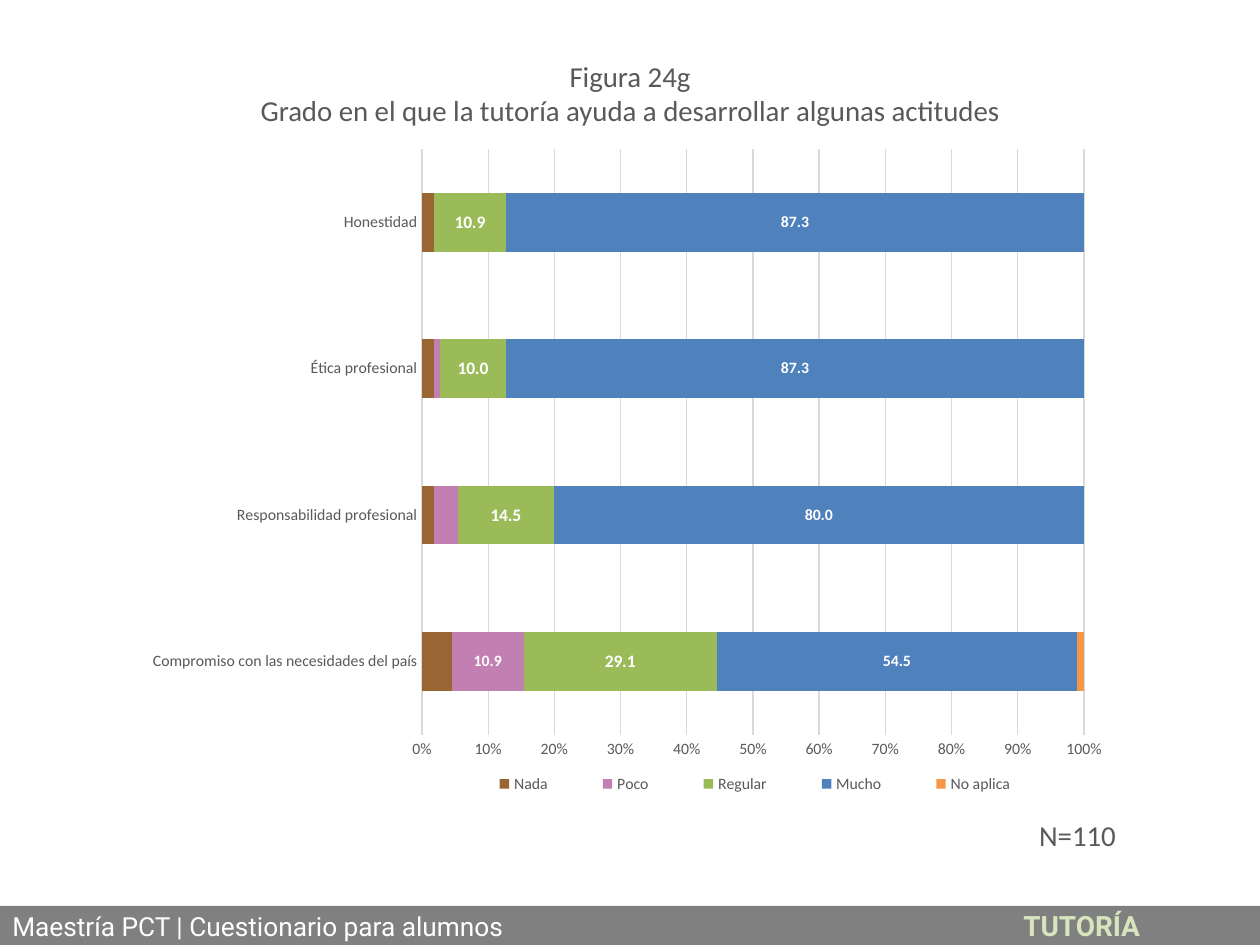
from lxml import etree
from pptx import Presentation
from pptx import util as u
from pptx.chart.data import CategoryChartData
from pptx.dml.color import RGBColor
from pptx.enum import chart as ch, shapes, text
from pptx.oxml import parse_xml
from pptx.oxml.ns import nsdecls, qn

PX = 914400 / 126
WHITE = RGBColor(0xFF, 0xFF, 0xFF)
TEXT_GRAY = RGBColor(0x59, 0x59, 0x59)
GRID_GRAY = RGBColor(0xD9, 0xD9, 0xD9)
BAND_GRAY = RGBColor(0x80, 0x80, 0x80)
PALE_GREEN = RGBColor(0xD7, 0xE4, 0xBD)
BROWN = RGBColor(0x99, 0x66, 0x33)
PINK = RGBColor(0xC2, 0x7F, 0xB2)
GREEN = RGBColor(0x9B, 0xBB, 0x59)
BLUE = RGBColor(0x4F, 0x81, 0xBD)
ORANGE = RGBColor(0xF7, 0x96, 0x46)

CATEGORIES = ["Compromiso con las necesidades del país", "Responsabilidad profesional",
              "Ética profesional", "Honestidad"]
# name, values, colour, label size, labelled points
SERIES = [
    ("Nada", (4.5, 1.8, 1.8, 1.8), BROWN, None, ()),
    ("Poco", (10.9, 3.6, 0.9, 0), PINK, 9, (0,)),
    ("Regular", (29.1, 14.5, 10.0, 10.9), GREEN, 10, range(4)),
    ("Mucho", (54.5, 80.0, 87.3, 87.3), BLUE, 9, range(4)),
    ("No aplica", (1, 0, 0, 0), ORANGE, None, ()),
]
CHART_BOX = (134, 135, 988, 674)
PLOT_BOX = (422, 149, 662, 586)
LEGEND_BOX = (450, 770, 610, 28)


def px(*values):
    return [round(v * PX) for v in values]


def set_font(font, color, **values):
    for name, value in values.items():
        setattr(font, name, value)
    font.color.rgb = color


def add_text(slide, box, lines):
    tf = slide.shapes.add_textbox(*px(*box)).text_frame
    tf.word_wrap = False
    tf.auto_size = text.MSO_AUTO_SIZE.SHAPE_TO_FIT_TEXT
    for i, line in enumerate(lines):
        p = tf.add_paragraph() if i else tf.paragraphs[0]
        p.alignment = text.PP_ALIGN.CENTER
        r = p.add_run()
        r.text = line
        set_font(r.font, TEXT_GRAY, name="Calibri", size=u.Pt(16.5))


def add_footer(slide, box, left_text, right_text, tab):
    sp = slide.shapes.add_shape(shapes.MSO_SHAPE.RECTANGLE, *px(*box))
    sp.shadow.inherit = False
    sp.fill.solid()
    sp.fill.fore_color.rgb = BAND_GRAY
    sp.line.fill.background()
    tf = sp.text_frame
    tf.vertical_anchor = text.MSO_ANCHOR.MIDDLE
    p = tf.paragraphs[0]
    p.alignment = text.PP_ALIGN.LEFT
    tabs = etree.SubElement(p._p.get_or_add_pPr(), qn("a:tabLst"))
    etree.SubElement(tabs, qn("a:tab"), pos=str(px(tab)[0]), algn="l")
    for content, color, size, bold in ((left_text + "\t", WHITE, 15, False),
                                       (right_text, PALE_GREEN, 16, True)):
        r = p.add_run()
        r.text = content
        set_font(r.font, color, name="Roboto", size=u.Pt(size), bold=bold)


def place(element, box, inner=False):
    """Give a chart part a fixed place, as fractions of the chart."""
    left, top, width, height = CHART_BOX
    fractions = ((box[0] - left) / width, (box[1] - top) / height,
                 box[2] / width, box[3] / height)
    parts = '<c:layoutTarget val="inner"/>' if inner else ""
    parts += '<c:xMode val="edge"/><c:yMode val="edge"/>'
    parts += "".join(f'<c:{k} val="{v:.4f}"/>' for k, v in zip("xywh", fractions))
    for old in element.findall(qn("c:layout")):
        element.remove(old)
    layout = parse_xml(f'<c:layout {nsdecls("c")}><c:manualLayout>{parts}'
                       '</c:manualLayout></c:layout>')
    position = element.find(qn("c:legendPos"))
    if position is None:
        element.insert(0, layout)
    else:
        position.addnext(layout)


def label_series(series, size, points):
    labels = series.data_labels
    labels.show_value = True
    labels.number_format = "###0.0"
    labels.number_format_is_linked = False
    labels.position = ch.XL_LABEL_POSITION.CENTER
    set_font(labels.font, WHITE, name="Calibri", size=u.Pt(size), bold=True)
    for i in set(range(len(CATEGORIES))) - set(points):
        hidden = parse_xml(f'<c:dLbl {nsdecls("c")}><c:idx val="{i}"/>'
                           '<c:delete val="1"/></c:dLbl>')
        labels._element.insert_element_before(
            hidden, "c:numFmt", "c:spPr", "c:txPr", "c:dLblPos", "c:showLegendKey")


def add_bar_chart(slide):
    data = CategoryChartData(number_format="###0.0")
    data.categories = CATEGORIES
    for name, values, *_ in SERIES:
        data.add_series(name, values)
    chart = slide.shapes.add_chart(
        ch.XL_CHART_TYPE.BAR_STACKED_100, *px(*CHART_BOX), data).chart
    chart.has_title = False
    set_font(chart.font, TEXT_GRAY, name="Calibri", size=u.Pt(9))

    # Bars
    plot = chart.plots[0]
    plot.gap_width, plot.overlap, plot.vary_by_categories = 150, 100, False
    for series, (_, _, color, size, points) in zip(plot.series, SERIES):
        series.format.fill.solid()
        series.format.fill.fore_color.rgb = color
        if points:
            label_series(series, size, points)

    # Axes
    cat, val = chart.category_axis, chart.value_axis
    for axis in (cat, val):
        axis.major_tick_mark = axis.minor_tick_mark = ch.XL_TICK_MARK.NONE
        set_font(axis.tick_labels.font, TEXT_GRAY, name="Calibri", size=u.Pt(9))
    val.has_major_gridlines = True
    for line in (cat.format.line, val.major_gridlines.format.line):
        line.color.rgb = GRID_GRAY
        line.width = u.Pt(0.75)
    val.format.line.fill.background()
    val.minimum_scale, val.maximum_scale, val.major_unit = 0, 1, 0.1
    val.tick_labels.number_format = "0%"
    val.tick_labels.number_format_is_linked = False

    # Legend and fixed places
    chart.has_legend = True
    legend = chart.legend
    legend.position = ch.XL_LEGEND_POSITION.BOTTOM
    legend.include_in_layout = False
    set_font(legend.font, TEXT_GRAY, name="Calibri", size=u.Pt(9))
    place(legend._element, LEGEND_BOX)
    place(chart._chartSpace.chart.plotArea, PLOT_BOX, inner=True)


def main():
    prs = Presentation()
    prs.slide_width, prs.slide_height = px(1260, 945)
    slide = prs.slides.add_slide(prs.slide_layouts[6])
    add_text(slide, (1026, 811, 103, 48), ["N=110"])
    add_footer(slide, (0, 906, 1260, 39), "Maestría PCT | Cuestionario para alumnos",
               "TUTORÍA", tab=1011)
    add_bar_chart(slide)
    add_text(slide, (247, 52, 766, 117),
             ["Figura 24g",
              "Grado en el que la tutoría ayuda a desarrollar algunas actitudes"])
    prs.save("out.pptx")


if __name__ == "__main__":
    main()
